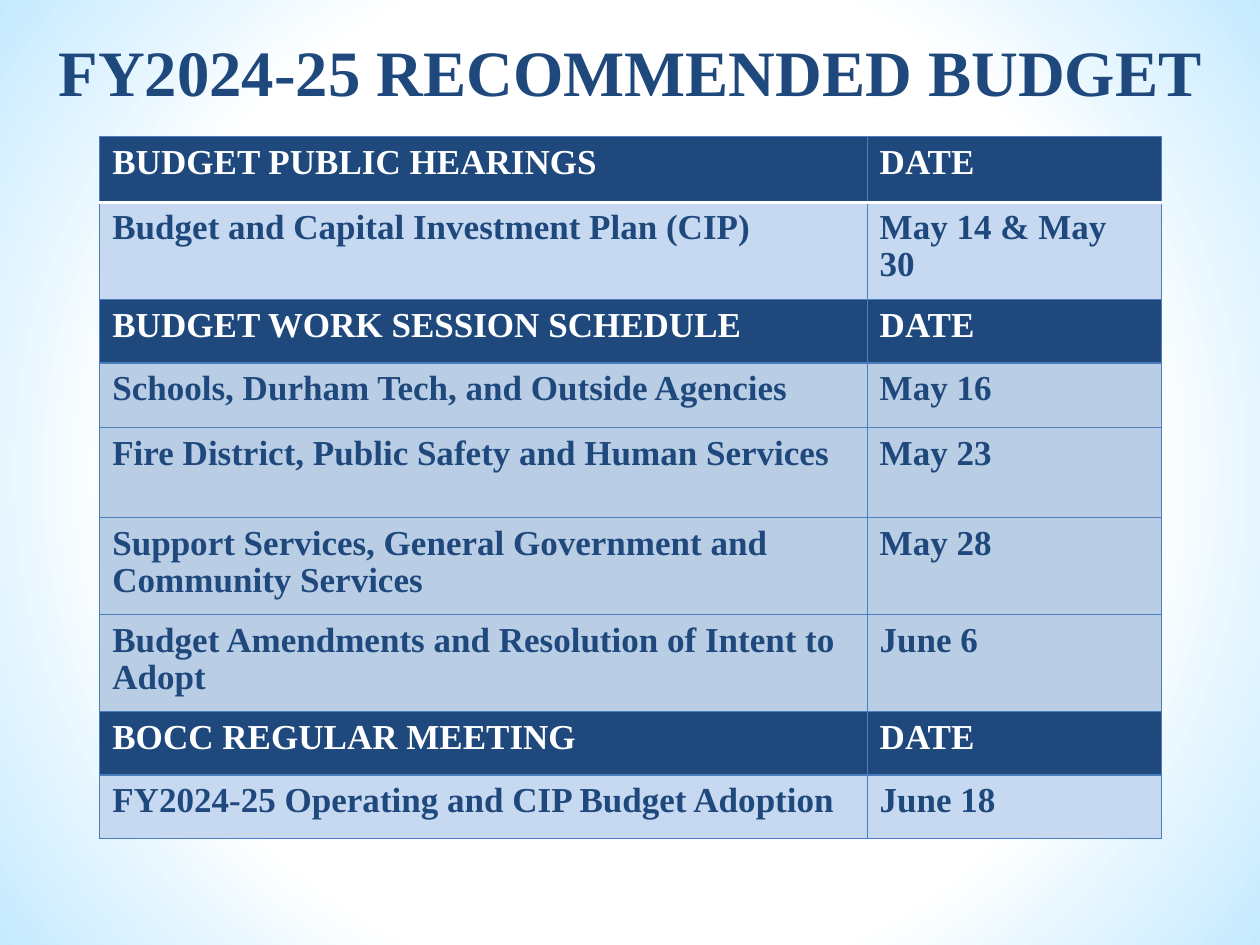
from pptx import Presentation
from pptx.dml.color import RGBColor
from pptx.enum.text import MSO_ANCHOR, PP_ALIGN
from pptx.oxml import parse_xml
from pptx.oxml.ns import nsdecls, qn
from pptx.util import Pt

CENTER = PP_ALIGN.CENTER
MIDDLE = MSO_ANCHOR.MIDDLE

NAVY, WHITE, EDGE = "1F497D", "FFFFFF", "4B7EBC"
PALE, STEEL, SKY = "C6D9F1", "B9CDE5", "C5EAFF"

ROWS = [
    ("BUDGET PUBLIC HEARINGS", "DATE", NAVY, 37.5),
    ("Budget and Capital Investment Plan (CIP)", "May 14 & May 30", PALE, 55.5),
    ("BUDGET WORK SESSION SCHEDULE", "DATE", NAVY, 36.5),
    ("Schools, Durham Tech, and Outside Agencies", "May 16", STEEL, 37),
    ("Fire District, Public Safety and Human Services", "May 23", STEEL, 51.5),
    ("Support Services, General Government and Community Services", "May 28", STEEL, 55.5),
    ("Budget Amendments and Resolution of Intent to Adopt", "June 6", STEEL, 55),
    ("BOCC REGULAR MEETING", "DATE", NAVY, 36.5),
    ("FY2024-25 Operating and CIP Budget Adoption", "June 18", PALE, 36.5),
]


def color(value):
    return RGBColor.from_string(value)


class Deck:
    face = "Times New Roman"

    def __init__(self, wide, high):
        self.file = Presentation()
        self.file.slide_width, self.file.slide_height = Pt(wide), Pt(high)
        self.slide = self.file.slides.add_slide(self.file.slide_layouts[5])

    def glow(self, inner, outer):
        fill = self.slide.background.fill
        fill.gradient()
        for stop, place, tint in zip(fill.gradient_stops, (0.65, 1), (inner, outer)):
            stop.position = place
            stop.color.rgb = color(tint)
        grad = self.slide.element.find(".//" + qn("a:gradFill"))
        grad.replace(grad.find(qn("a:lin")), parse_xml(
            f'<a:path {nsdecls("a")} path="circle">'
            '<a:fillToRect l="50000" t="50000" r="50000" b="50000"/></a:path>'))

    def style(self, frame, size, tint):
        for run in frame.paragraphs[0].runs:
            font = run.font
            font.name, font.size, font.bold = self.face, Pt(size), True
            font.color.rgb = color(tint)

    def title(self, text, left, top, width, height):
        shape = self.slide.shapes.title
        shape.left, shape.top = Pt(left), Pt(top)
        shape.width, shape.height = Pt(width), Pt(height)
        frame = shape.text_frame
        frame.text = text
        frame.vertical_anchor = MIDDLE
        frame.paragraphs[0].alignment = CENTER
        self.style(frame, 37, NAVY)

    def border(self, cell, sides):
        props = cell._tc.get_or_add_tcPr()
        for side, (tint, width) in sides.items():
            props.append(parse_xml(
                f'<a:ln{side} {nsdecls("a")} w="{Pt(width)}"><a:solidFill>'
                f'<a:srgbClr val="{tint}"/></a:solidFill></a:ln{side}>'))

    def cell(self, cell, text, fill, sides):
        self.border(cell, sides)
        cell.fill.solid()
        cell.fill.fore_color.rgb = color(fill)
        cell.margin_left = cell.margin_right = Pt(7.2)
        cell.margin_top, cell.margin_bottom = Pt(4.8), Pt(3.6)
        frame = cell.text_frame
        frame.text = text
        frame.paragraphs[0].line_spacing = 0.95
        self.style(frame, 20, WHITE if fill == NAVY else NAVY)

    def table(self, rows, left, top, widths):
        high = sum(row[-1] for row in rows)
        table = self.slide.shapes.add_table(
            len(rows), len(widths), Pt(left), Pt(top), Pt(sum(widths)), Pt(high)).table
        for column, width in zip(table.columns, widths):
            column.width = Pt(width)
        for index, (*texts, fill, height) in enumerate(rows):
            table.rows[index].height = Pt(height)
            sides = dict.fromkeys("LRTB", (EDGE, 0.75))
            if index < 2:
                sides["BT"[index]] = (WHITE, 2)
            for place, text in enumerate(texts):
                self.cell(table.cell(index, place), text, fill, sides)


deck = Deck(720, 540)
deck.glow(WHITE, SKY)
deck.title("FY2024-25 RECOMMENDED BUDGET", 0, 14.4, 720, 52)
deck.table(ROWS, 57, 78, (438.5, 168))
deck.file.save("out.pptx")
